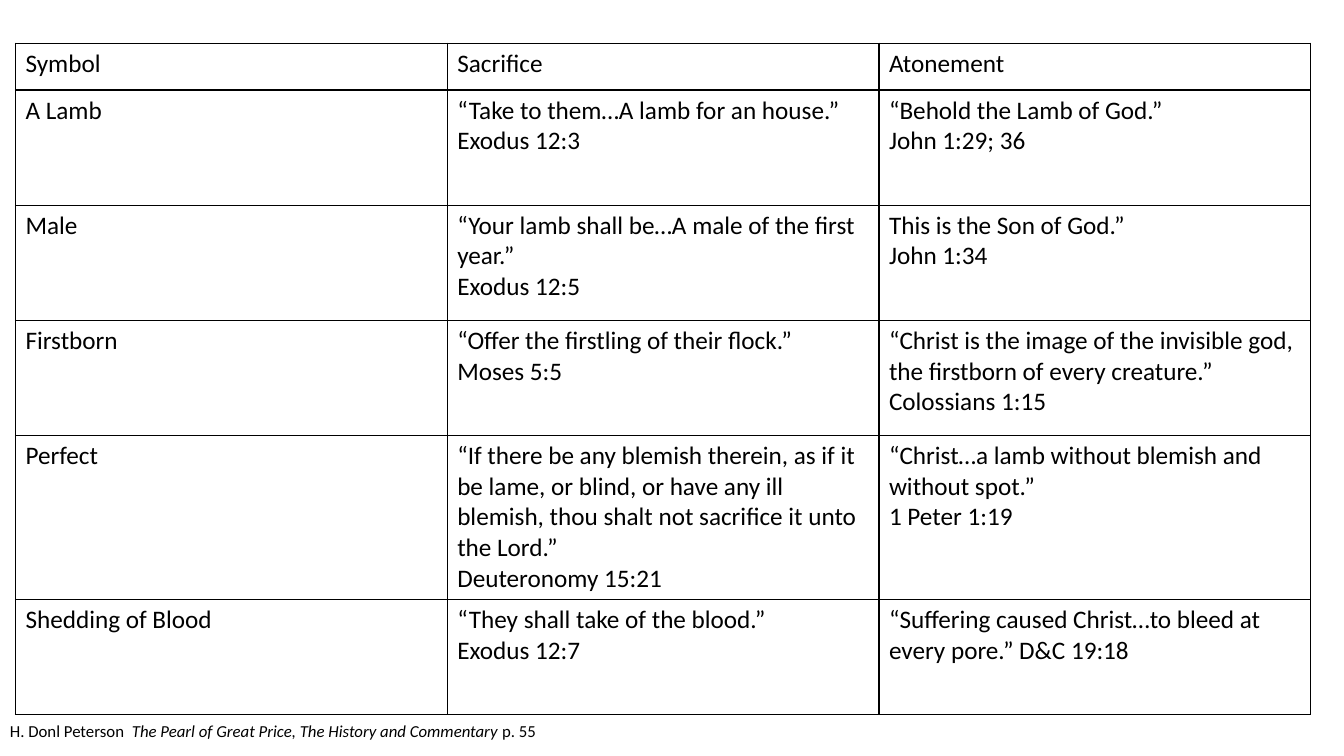
"""Build a slide comparing symbols of sacrifice with the Atonement."""
import dataclasses

import lxml.etree
import pptx
import pptx.dml.color
import pptx.oxml.ns
import pptx.util
from pptx.util import Cm


@dataclasses.dataclass(frozen=True)
class Theme:
    font: str = "Calibri"
    ink: str = "000000"
    table_size: int = 18
    credit_size: int = 12
    border_width: int = 1


theme = Theme()


def style_paragraph(paragraph, size):
    paragraph.font.name = theme.font
    paragraph.font.size = pptx.util.Pt(size)
    paragraph.font.color.rgb = pptx.dml.color.RGBColor.from_string(theme.ink)


def add_borders(cell):
    properties = cell._tc.get_or_add_tcPr()
    for side in ("lnL", "lnR", "lnT", "lnB"):
        line = lxml.etree.SubElement(
            properties,
            pptx.oxml.ns.qn(f"a:{side}"),
            w=str(pptx.util.Pt(theme.border_width)),
        )
        fill = lxml.etree.SubElement(line, pptx.oxml.ns.qn("a:solidFill"))
        lxml.etree.SubElement(fill, pptx.oxml.ns.qn("a:srgbClr"), val=theme.ink)


rows = [
    ("Symbol", "Sacrifice", "Atonement"),
    (
        "A Lamb",
        "“Take to them…A lamb for an house.”\nExodus 12:3",
        "“Behold the Lamb of God.”\nJohn 1:29; 36",
    ),
    (
        "Male",
        "“Your lamb shall be…A male of the first year.”\nExodus 12:5",
        "This is the Son of God.”\nJohn 1:34",
    ),
    (
        "Firstborn",
        "“Offer the firstling of their flock.”\nMoses 5:5",
        "“Christ is the image of the invisible god, the firstborn of every creature.”\n"
        "Colossians 1:15",
    ),
    (
        "Perfect",
        "“If there be any blemish therein, as if it be lame, or blind, or have any ill "
        "blemish, thou shalt not sacrifice it unto the Lord.”\nDeuteronomy 15:21",
        "“Christ…a lamb without blemish and without spot.”\n1 Peter 1:19",
    ),
    (
        "Shedding of Blood",
        "“They shall take of the blood.”\nExodus 12:7",
        "“Suffering caused Christ…to bleed at every pore.” D&C 19:18",
    ),
]
credit = [
    ("H. Donl Peterson  ", False),
    ("The Pearl of Great Price, The History and Commentary ", True),
    ("p. 55", False),
]

presentation = pptx.Presentation()
presentation.slide_width = Cm(33.87)
presentation.slide_height = Cm(19.05)
slide = presentation.slides.add_slide(presentation.slide_layouts[6])

header_height, body_height = Cm(1.18), Cm(2.9)
table_height = header_height + body_height * (len(rows) - 1)
table = slide.shapes.add_table(
    len(rows), len(rows[0]), Cm(0.39), Cm(1.09), Cm(32.64), table_height
).table
table.first_row = False
table.horz_banding = False

for row_index, texts in enumerate(rows):
    table.rows[row_index].height = body_height if row_index else header_height
    for column_index, text in enumerate(texts):
        cell = table.cell(row_index, column_index)
        cell.text = text
        add_borders(cell)
        cell.fill.background()
        for paragraph in cell.text_frame.paragraphs:
            style_paragraph(paragraph, theme.table_size)

credit_box = slide.shapes.add_textbox(0, Cm(18.03), Cm(16.93), Cm(1.27))
credit_box.text_frame.word_wrap = True
paragraph = credit_box.text_frame.paragraphs[0]
style_paragraph(paragraph, theme.credit_size)
for text, italic in credit:
    run = paragraph.add_run()
    run.text = text
    run.font.italic = italic

presentation.save("out.pptx")
